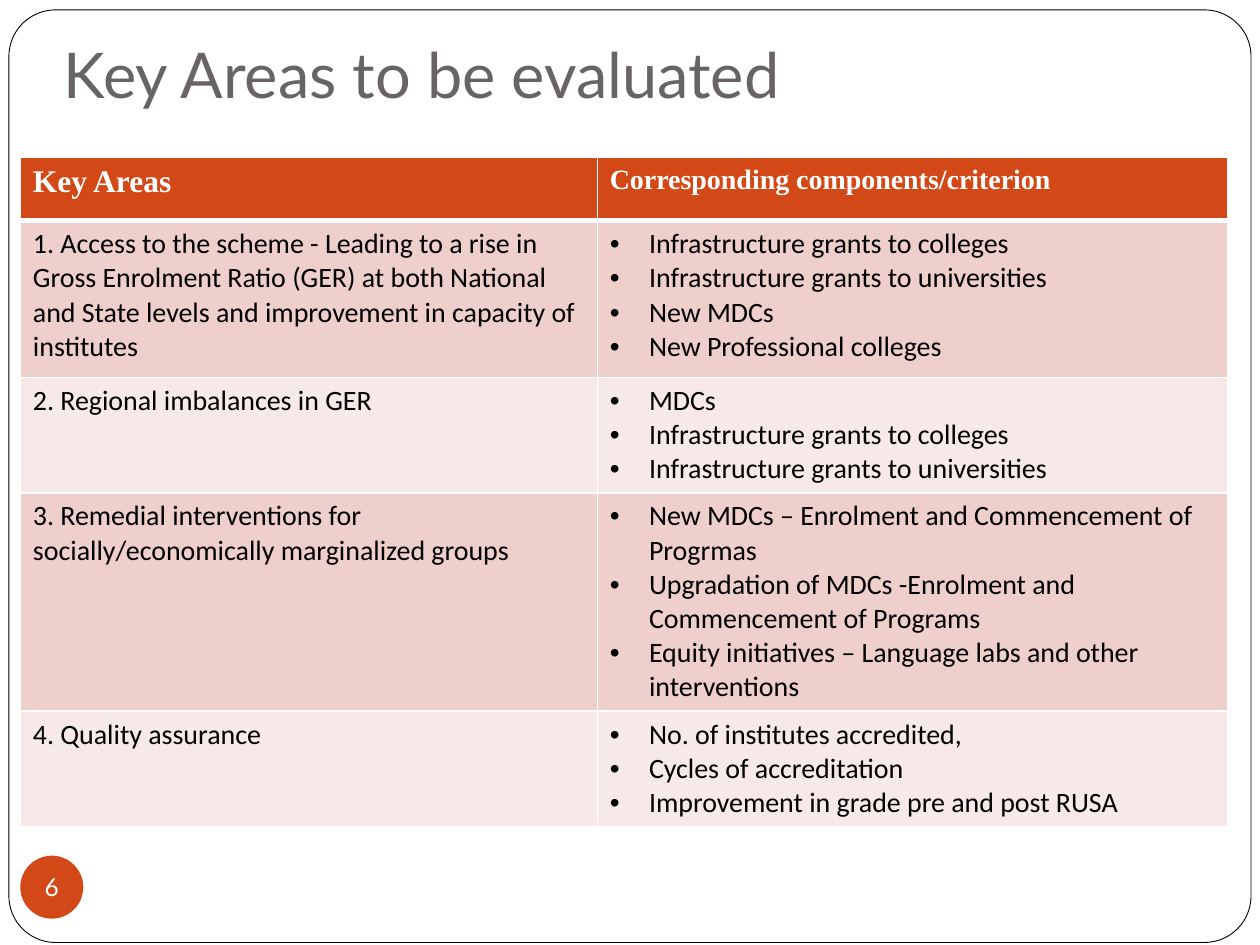
from lxml.etree import SubElement
from pptx import Presentation
from pptx.dml.color import RGBColor
from pptx.enum.shapes import MSO_SHAPE as Shape
from pptx.enum.text import MSO_ANCHOR as Anchor, MSO_AUTO_SIZE as AutoSize, PP_ALIGN as Align
from pptx.oxml.ns import qn
from pptx.util import Cm, Pt

COLORS = {
    "accent": "D34817",
    "title": "696464",
    "white": "FFFFFF",
    "black": "000000",
    "band_dark": "EFCFCC",
    "band_light": "F7E9E8",
}
HEADERS = [("Key Areas", 18), ("Corresponding components/criterion", 16)]
AREAS = [
    ("1. Access to the scheme - Leading to a rise in Gross Enrolment Ratio (GER) at both "
     "National and State levels and improvement in capacity of institutes",
     ["Infrastructure grants to colleges", "Infrastructure grants to universities",
      "New MDCs", "New Professional colleges"]),
    ("2. Regional imbalances in GER",
     ["MDCs", "Infrastructure grants to colleges", "Infrastructure grants to universities"]),
    ("3. Remedial interventions for socially/economically marginalized groups",
     ["New MDCs – Enrolment and Commencement of Progrmas",
      "Upgradation of MDCs -Enrolment and Commencement of Programs",
      "Equity initiatives – Language labs and other interventions"]),
    ("4. Quality assurance",
     ["No. of institutes accredited,", "Cycles of accreditation",
      "Improvement in grade pre and post RUSA"]),
]
COLUMN_WIDTHS = [11.63, 12.7]
ROW_HEIGHTS = [1.27, 3.16, 2.32, 4.4, 2.32]


def rgb(name):
    """Return the palette colour with the given name."""
    return RGBColor.from_string(COLORS[name])


def write(frame, lines, font="Calibri", size=16, color="black", bold=False,
          align=Align.LEFT, bullet=None):
    """Write one paragraph per line into a text frame."""
    for index, line in enumerate(lines):
        paragraph = frame.add_paragraph() if index else frame.paragraphs[0]
        paragraph.alignment = align
        run = paragraph.add_run()
        run.text = line
        run.font.name, run.font.size, run.font.bold = font, Pt(size), bold
        run.font.color.rgb = rgb(color)
        if bullet:
            properties = paragraph._p.get_or_add_pPr()
            properties.set("marL", str(Cm(0.79)))
            properties.set("indent", str(-Cm(0.79)))
            SubElement(properties, qn("a:buFont"), typeface="Arial")
            SubElement(properties, qn("a:buChar"), char=bullet)


def set_insets(frame, left=0, top=0, right=0, bottom=0):
    """Set the inner margins of a text frame in centimetres."""
    frame.margin_left, frame.margin_top = Cm(left), Cm(top)
    frame.margin_right, frame.margin_bottom = Cm(right), Cm(bottom)


def add_panel(slide, left, top, width, height):
    """Draw the rounded frame around the slide."""
    panel = slide.shapes.add_shape(Shape.ROUNDED_RECTANGLE, Cm(left), Cm(top), Cm(width), Cm(height))
    panel.adjustments[0] = 0.05
    panel.shadow.inherit = False
    panel.fill.solid()
    panel.fill.fore_color.rgb = rgb("white")
    panel.line.color.rgb = rgb("black")
    panel.line.width = Pt(0.5)


def add_title(slide, left, top, width, height):
    """Place and format the title placeholder in front of the panel."""
    title = slide.shapes.title
    title.left, title.top, title.width, title.height = Cm(left), Cm(top), Cm(width), Cm(height)
    frame = title.text_frame
    frame.auto_size = AutoSize.NONE
    frame.vertical_anchor = Anchor.BOTTOM
    set_insets(frame, left=0.25, top=0.13, right=0.25, bottom=1.78)
    write(frame, ["Key Areas to be evaluated"], font="Lato", size=36, color="title")
    slide.shapes._spTree.append(title._element)


def style_cell(cell, fill, bottom_width=1):
    """Give a cell white borders and a solid fill."""
    properties = cell._tc.get_or_add_tcPr()
    for side, width in zip("LRTB", [1, 1, 1, bottom_width]):
        line = SubElement(properties, qn(f"a:ln{side}"), w=str(Pt(width)))
        solid = SubElement(line, qn("a:solidFill"))
        SubElement(solid, qn("a:srgbClr"), val=COLORS["white"])
    cell.fill.solid()
    cell.fill.fore_color.rgb = rgb(fill)


def add_areas_table(slide, left, top):
    """Build the table of key areas and their criteria."""
    table = slide.shapes.add_table(
        len(ROW_HEIGHTS), len(COLUMN_WIDTHS), Cm(left), Cm(top),
        Cm(sum(COLUMN_WIDTHS)), Cm(sum(ROW_HEIGHTS))).table
    for column, width in zip(table.columns, COLUMN_WIDTHS):
        column.width = Cm(width)
    for row, height in zip(table.rows, ROW_HEIGHTS):
        row.height = Cm(height)
    for column, (text, size) in enumerate(HEADERS):
        cell = table.cell(0, column)
        style_cell(cell, "accent", bottom_width=3)
        write(cell.text_frame, [text], font="Times New Roman", size=size, color="white", bold=True)
    for row, (area, criteria) in enumerate(AREAS, start=1):
        area_cell, criteria_cell = table.rows[row].cells
        for cell in (area_cell, criteria_cell):
            style_cell(cell, "band_dark" if row % 2 else "band_light")
        write(area_cell.text_frame, [area], align=Align.JUSTIFY if row == len(AREAS) else Align.LEFT)
        write(criteria_cell.text_frame, criteria, bullet="•")


def add_page_number(slide, left, top, diameter):
    """Draw the round page number badge."""
    badge = slide.shapes.add_shape(Shape.OVAL, Cm(left), Cm(top), Cm(diameter), Cm(diameter))
    badge.shadow.inherit = False
    badge.fill.solid()
    badge.fill.fore_color.rgb = rgb("accent")
    badge.line.fill.background()
    frame = badge.text_frame
    frame.word_wrap = False
    frame.vertical_anchor = Anchor.MIDDLE
    set_insets(frame)
    write(frame, ["6"], font="Lato", size=14, color="white", align=Align.CENTER)


def main():
    """Build and save the presentation."""
    presentation = Presentation()
    presentation.slide_width, presentation.slide_height = Cm(25.4), Cm(19.05)
    slide = presentation.slides.add_slide(presentation.slide_layouts[5])
    add_panel(slide, 0.18, 0.2, 25.04, 18.8)
    add_title(slide, 1.04, 0.84, 21.59, 3.18)
    add_areas_table(slide, 0.41, 3.18)
    add_page_number(slide, 0.41, 17.25, 1.27)
    presentation.save("out.pptx")


if __name__ == "__main__":
    main()
